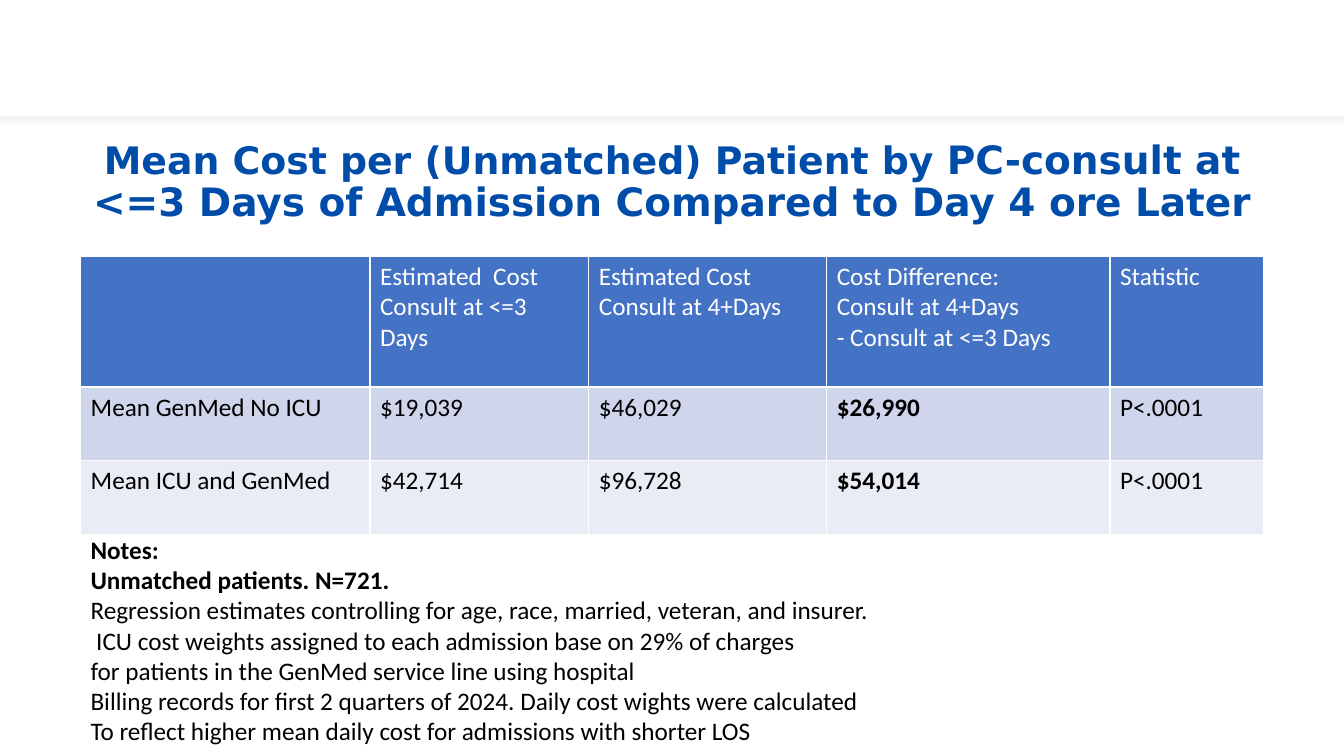
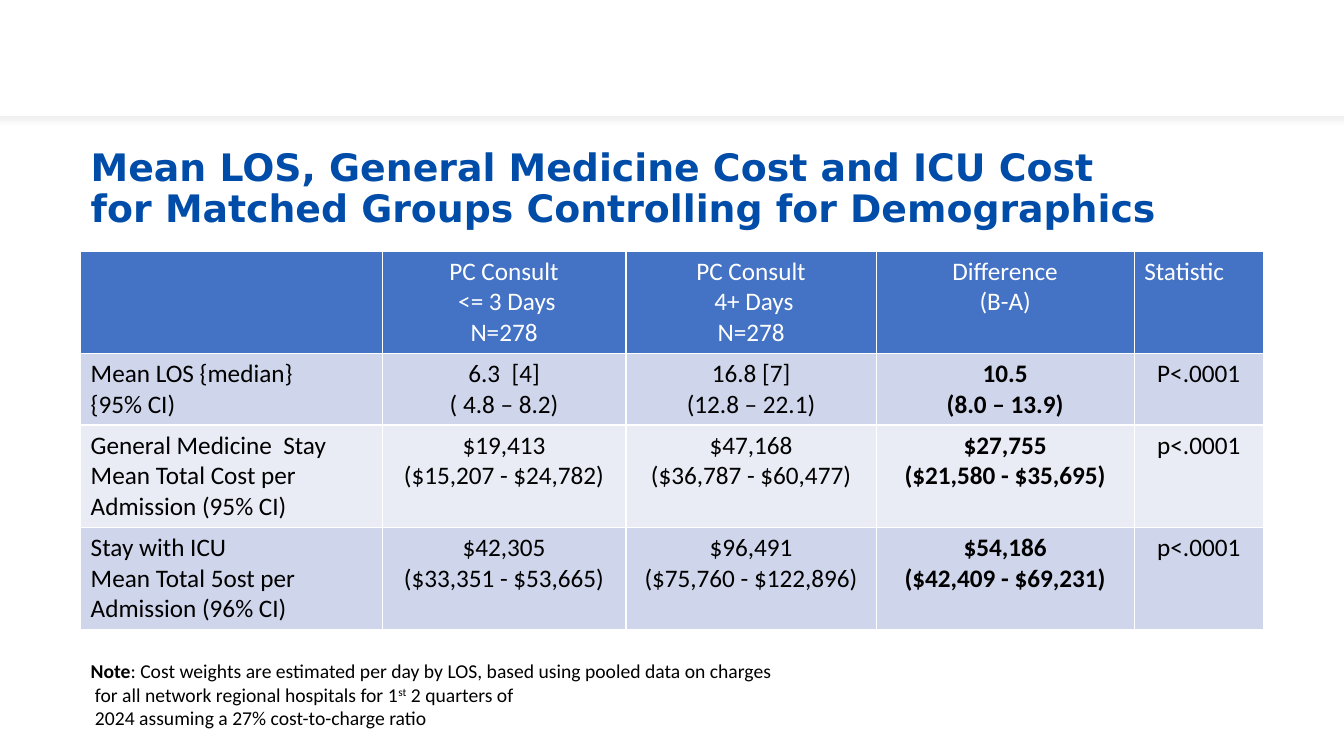
"""Build two slides of tables comparing costs by time to consult."""
from dataclasses import dataclass

from lxml import etree
from pptx import Presentation
from pptx.dml.color import RGBColor
from pptx.enum.shapes import MSO_SHAPE
from pptx.enum.text import MSO_ANCHOR, MSO_AUTO_SIZE, PP_ALIGN
from pptx.oxml import parse_xml
from pptx.oxml.ns import nsdecls, qn
from pptx.util import Emu, Pt

RECTANGLE = MSO_SHAPE.RECTANGLE
MIDDLE = MSO_ANCHOR.MIDDLE
FIXED = MSO_AUTO_SIZE.NONE
LEFT, CENTER = PP_ALIGN.LEFT, PP_ALIGN.CENTER
EMU_PER_PX = 9144
TITLE_ONLY = 5
MARGIN, CONTENT_WIDTH = 80, 1173
DIFFERENCE_COLUMN = 3


@dataclass(frozen=True)
class Theme:
    white: str = "FFFFFF"
    ink: str = "000000"
    title: str = "004CA9"
    header: str = "4472C4"
    bands: tuple = ("CFD5EA", "E9EBF5")
    title_font: str = "DejaVu Sans"
    body_font: str = "Calibri"
    title_size: float = 27
    title_large: float = 27.9
    body_size: float = 18
    note_size: float = 14
    rule: float = 1


def px(length):
    return Emu(length * EMU_PER_PX)


def box(left, top, width, height):
    return px(left), px(top), px(width), px(height)


class Deck:
    def __init__(self, theme):
        self.theme = theme
        self.presentation = Presentation()
        self.presentation.slide_width = px(1333)
        self.presentation.slide_height = px(750)
        self.slide = None

    def new_slide(self):
        layout = self.presentation.slide_layouts[TITLE_ONLY]
        self.slide = self.presentation.slides.add_slide(layout)
        self.band()

    def band(self):
        band = self.slide.shapes.add_shape(RECTANGLE, *box(-5, -7, 1341, 122))
        band.fill.solid()
        band.fill.fore_color.rgb = RGBColor.from_string(self.theme.white)
        band.line.fill.background()
        band.shadow.inherit = False
        effects = band.element.spPr.find(qn("a:effectLst"))
        effects.append(parse_xml(
            f'<a:outerShdw {nsdecls("a")} blurRad="{Pt(4)}" dist="{Pt(3)}" '
            f'dir="5400000" algn="t" rotWithShape="0">'
            f'<a:srgbClr val="{self.theme.ink}"><a:alpha val="6000"/></a:srgbClr>'
            f'</a:outerShdw>'))
        self.slide.shapes.element.insert(2, band.element)

    def style(self, paragraph, color, size, font=None, bold=None):
        paragraph.font.name = font or self.theme.body_font
        paragraph.font.size = Pt(size)
        paragraph.font.bold = bold
        paragraph.font.color.rgb = RGBColor.from_string(color)

    def title(self, top, lines, align):
        heading = self.slide.shapes.title
        heading.left, heading.top, heading.width, heading.height = box(
            MARGIN, top, CONTENT_WIDTH, 145)
        frame = heading.text_frame
        frame.word_wrap = True
        frame.auto_size = FIXED
        frame.vertical_anchor = MIDDLE
        paragraph = frame.paragraphs[0]
        paragraph.alignment = align
        paragraph.line_spacing = 0.9
        self.style(paragraph, self.theme.title, self.theme.title_size,
                   self.theme.title_font, True)
        for index, line in enumerate(lines):
            if index:
                paragraph.add_line_break()
            for text, size in line:
                run = paragraph.add_run()
                run.text = text
                run.font.size = Pt(size)

    def cell_borders(self, cell):
        properties = cell._tc.get_or_add_tcPr()
        width = str(Pt(self.theme.rule))
        for side in "LRTB":
            line = etree.SubElement(properties, qn(f"a:ln{side}"), w=width)
            fill = etree.SubElement(line, qn("a:solidFill"))
            etree.SubElement(fill, qn("a:srgbClr"), val=self.theme.white)

    def cell(self, cell, text, fill, color, align, bold):
        self.cell_borders(cell)
        cell.fill.solid()
        cell.fill.fore_color.rgb = RGBColor.from_string(fill)
        cell.text_frame.text = text
        for paragraph in cell.text_frame.paragraphs:
            paragraph.alignment = align
            self.style(paragraph, color, self.theme.body_size, bold=bold)

    def table(self, top, widths, heights, rows, value_align):
        theme = self.theme
        table = self.slide.shapes.add_table(
            len(rows), len(widths),
            *box(MARGIN, top, sum(widths), sum(heights))).table
        table.horz_banding = False
        for column, width in zip(table.columns, widths):
            column.width = px(width)
        for r, (height, texts) in enumerate(zip(heights, rows)):
            table.rows[r].height = px(height)
            header = r == 0
            fill = theme.header if header else theme.bands[(r - 1) % 2]
            color = theme.white if header else theme.ink
            for c, text in enumerate(texts):
                corner = header and c == len(widths) - 1
                align = LEFT if c == 0 or corner else value_align
                bold = not header and c == DIFFERENCE_COLUMN
                self.cell(table.cell(r, c), text, fill, color, align, bold)

    def notes(self, area, lines, size):
        frame = self.slide.shapes.add_textbox(*box(*area)).text_frame
        frame.word_wrap = True
        for index, line in enumerate(lines):
            paragraph = frame.add_paragraph() if index else frame.paragraphs[0]
            self.style(paragraph, self.theme.ink, size)
            for text, emphasis in line:
                run = paragraph.add_run()
                run.text = text
                if emphasis == "bold":
                    run.font.bold = True
                elif emphasis == "superscript":
                    run._r.get_or_add_rPr().set("baseline", "30000")

    def save(self):
        self.presentation.save("out.pptx")


def unmatched_cost(deck):
    theme = deck.theme
    deck.new_slide()
    deck.title(109, [[
        ("Mean Cost per (Unmatched) Patient by ", theme.title_size),
        ("PC-consult at <=3 Days of Admission Compared to Day 4 ore Later",
         theme.title_large),
    ]], CENTER)
    deck.table(254, (287, 217, 236, 281, 152), (130, 73, 73), [
        ("", "Estimated  Cost\nConsult at <=3 Days",
         "Estimated Cost\nConsult at 4+Days",
         "Cost Difference:\nConsult at 4+Days\n- Consult at <=3 Days", "Statistic"),
        ("Mean GenMed No ICU", "$19,039", "$46,029", "$26,990", "P<.0001"),
        ("Mean ICU and GenMed", "$42,714", "$96,728", "$54,014", "P<.0001"),
    ], LEFT)
    deck.notes((MARGIN, 525, CONTENT_WIDTH, 222), [
        [("Notes:", "bold")],
        [("Unmatched patients. N=721.", "bold")],
        [("Regression estimates controlling for age, race, married, veteran, "
          "and insurer.", None)],
        [(" ICU cost weights assigned to each admission base on 29% of charges",
          None)],
        [("for patients in the GenMed service line using hospital", None)],
        [("Billing records for first 2 quarters of 2024. Daily cost wights were "
          "calculated", None)],
        [("To reflect higher mean daily cost for admissions with shorter LOS",
          None)],
    ], theme.body_size)


def matched_cost(deck):
    theme = deck.theme
    deck.new_slide()
    deck.title(116, [
        [("Mean LOS, General Medicine Cost and ICU Cost", theme.title_size)],
        [("for Matched Groups Controlling for Demographics", theme.title_size)],
    ], LEFT)
    deck.table(249, (299, 242, 248, 256, 128), (101, 71, 101, 101), [
        ("", "PC Consult\n <= 3 Days\nN=278", "PC Consult\n 4+ Days\nN=278",
         "Difference\n(B-A)", "Statistic"),
        ("Mean LOS {median}\n{95% CI)", "6.3  [4]\n( 4.8 – 8.2)",
         "16.8 [7]\n(12.8 – 22.1)", "10.5\n(8.0 – 13.9)", "P<.0001"),
        ("General Medicine  Stay\nMean Total Cost per Admission (95% CI)",
         "$19,413\n($15,207 - $24,782)", "$47,168\n($36,787 - $60,477)",
         "$27,755\n($21,580 - $35,695)", "p<.0001"),
        ("Stay with ICU\nMean Total 5ost per Admission (96% CI)",
         "$42,305\n($33,351 - $53,665)", "$96,491\n($75,760 - $122,896)",
         "$54,186\n($42,409 - $69,231)", "p<.0001"),
    ], CENTER)
    deck.notes((MARGIN, 649, 742, 81), [
        [("Note", "bold"),
         (": Cost weights are estimated per day by LOS, based using pooled data "
          "on charges", None)],
        [(" for all network regional hospitals for 1", None), ("st", "superscript"),
         (" 2 quarters of", None)],
        [(" 2024 assuming a 27% cost-to-charge ratio", None)],
    ], theme.note_size)


def main():
    deck = Deck(Theme())
    unmatched_cost(deck)
    matched_cost(deck)
    deck.save()


if __name__ == "__main__":
    main()
